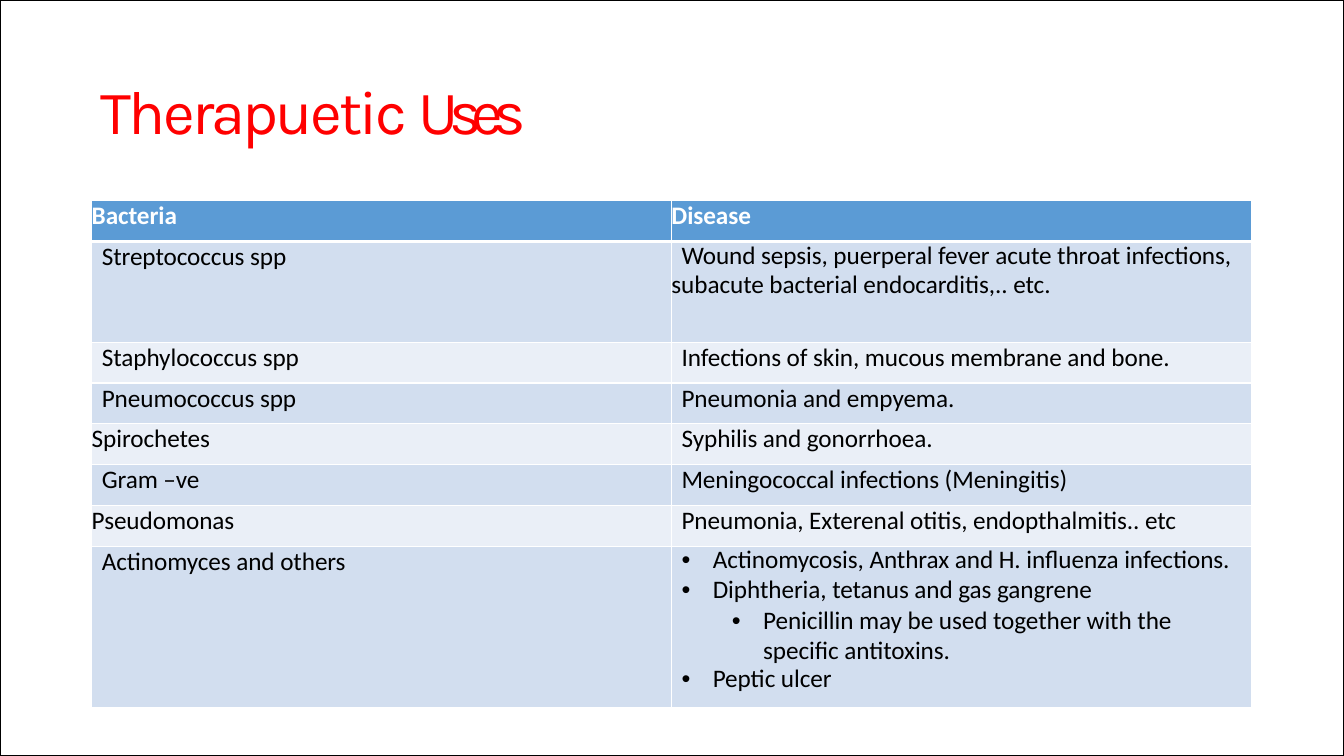
from pptx import Presentation
from pptx.dml.color import RGBColor
from pptx.enum.shapes import MSO_SHAPE as Shape
from pptx.enum.text import MSO_ANCHOR as Anchor, PP_ALIGN as Align
from pptx.oxml.ns import qn
from pptx.util import Inches, Pt
from lxml.etree import SubElement

RED = RGBColor(0xFF, 0, 0)
BLACK = RGBColor(0, 0, 0)
WHITE = RGBColor(0xFF, 0xFF, 0xFF)
HEADER_BLUE = RGBColor(0x5B, 0x9B, 0xD5)
DARK_BAND = RGBColor(0xD2, 0xDE, 0xEF)
LIGHT_BAND = RGBColor(0xEA, 0xEF, 0xF7)

TITLE = [("Therapuetic ", -200), ("Uses", -700)]
HEADINGS = ("Bacteria", "Disease")
USES = [
    ("Streptococcus spp",
     "Wound sepsis, puerperal fever acute throat infections, subacute bacterial endocarditis,.. etc."),
    ("Staphylococcus spp", "Infections of skin, mucous membrane and bone."),
    ("Pneumococcus spp", "Pneumonia and empyema."),
    ("Spirochetes", "Syphilis and gonorrhoea."),
    ("Gram –ve", "Meningococcal infections (Meningitis)"),
    ("Pseudomonas", "Pneumonia, Exterenal otitis, endopthalmitis.. etc"),
    ("Actinomyces and others", [
        (0, "Actinomycosis, Anthrax and H. influenza infections.", 21),
        (0, "Diphtheria, tetanus and gas gangrene", 21),
        (1, "Penicillin may be used together with the specific antitoxins.", 22),
        (0, "Peptic ulcer", 20),
    ]),
]
FLUSH = {"Spirochetes", "Pseudomonas", *HEADINGS}
TALL_ROWS = {1: 1, 7: 1.6}
TABLE_WIDTH, TABLE_HEIGHT = 11.5, 5.03

TITLE_FONT = {"name": "Karla", "size": Pt(44), "bold": False}
BODY_FONT = {"name": "Calibri", "size": Pt(18), "bold": False}
HEADER_FONT = {**BODY_FONT, "bold": True}
NO_MARGINS = dict.fromkeys(("margin_left", "margin_top", "margin_right", "margin_bottom"), 0)


def assign(target, values):
    for key, value in values.items():
        setattr(target, key, value)


def add_run(paragraph, text, look, color, spacing):
    run = paragraph.add_run()
    run.text = text
    assign(run.font, look)
    run.font.color.rgb = color
    run.font._element.set("spc", str(spacing))


def set_indent(paragraph, left, first):
    props = paragraph._p.get_or_add_pPr()
    props.set("marL", str(Inches(left)))
    props.set("indent", str(Inches(first)))
    return props


def border(cell, widths):
    props = cell._tc.get_or_add_tcPr()
    for side, width in zip("LRTB", widths):
        line = SubElement(props, qn(f"a:ln{side}"), w=str(Pt(width)))
        SubElement(SubElement(line, qn("a:solidFill")), qn("a:srgbClr"), val=str(WHITE))


def write_cell(cell, content, look, color):
    frame = cell.text_frame
    if isinstance(content, str):
        paragraph = frame.paragraphs[0]
        set_indent(paragraph, 0, 0 if content in FLUSH else 0.1)
        if content.startswith("Wound"):
            paragraph.line_spacing = Pt(21)
        add_run(paragraph, content, look, color, -5)
        return
    for index, (level, text, leading) in enumerate(content):
        paragraph = frame.add_paragraph() if index else frame.paragraphs[0]
        props = set_indent(paragraph, 0.41 + 0.5 * level, -0.31)
        SubElement(props, qn("a:buFont"), typeface="Arial")
        SubElement(props, qn("a:buChar"), char="•")
        assign(paragraph, {"level": level, "line_spacing": Pt(leading)})
        add_run(paragraph, text, look, color, -5)


def main():
    deck = Presentation()
    assign(deck, {"slide_width": Inches(13.33), "slide_height": Inches(7.5)})
    slide = deck.slides.add_slide(deck.slide_layouts[5])

    title = slide.shapes.title
    assign(title, {"left": Inches(1), "top": Inches(0.67),
                   "width": Inches(10), "height": Inches(0.94)})
    assign(title.text_frame, {**NO_MARGINS, "vertical_anchor": Anchor.MIDDLE})
    heading = title.text_frame.paragraphs[0]
    assign(heading, {"alignment": Align.LEFT, "line_spacing": 0.9})
    for text, spacing in TITLE:
        add_run(heading, text, TITLE_FONT, RED, spacing)

    rows = [HEADINGS, *USES]
    table = slide.shapes.add_table(
        len(rows), len(HEADINGS), Inches(0.91), Inches(1.99),
        Inches(TABLE_WIDTH), Inches(TABLE_HEIGHT)).table
    short_row = (TABLE_HEIGHT - sum(TALL_ROWS.values())) / (len(rows) - len(TALL_ROWS))
    for r, row in enumerate(rows):
        table.rows[r].height = Inches(TALL_ROWS.get(r, short_row))
        fill = (DARK_BAND if r % 2 else LIGHT_BAND) if r else HEADER_BLUE
        look, color = (BODY_FONT, BLACK) if r else (HEADER_FONT, WHITE)
        for c, content in enumerate(row):
            cell = table.cell(r, c)
            assign(cell, {**NO_MARGINS, "vertical_anchor": Anchor.TOP})
            border(cell, (1, 1, 3 if r == 1 else 1, 3 if r == 0 else 1))
            cell.fill.solid()
            cell.fill.fore_color.rgb = fill
            write_cell(cell, content, look, color)

    frame = slide.shapes.add_shape(Shape.RECTANGLE, 0, 0, deck.slide_width, deck.slide_height)
    frame.shadow.inherit = False
    frame.fill.background()
    frame.line.color.rgb = BLACK
    frame.line.width = Pt(1)

    deck.save("out.pptx")


if __name__ == "__main__":
    main()
